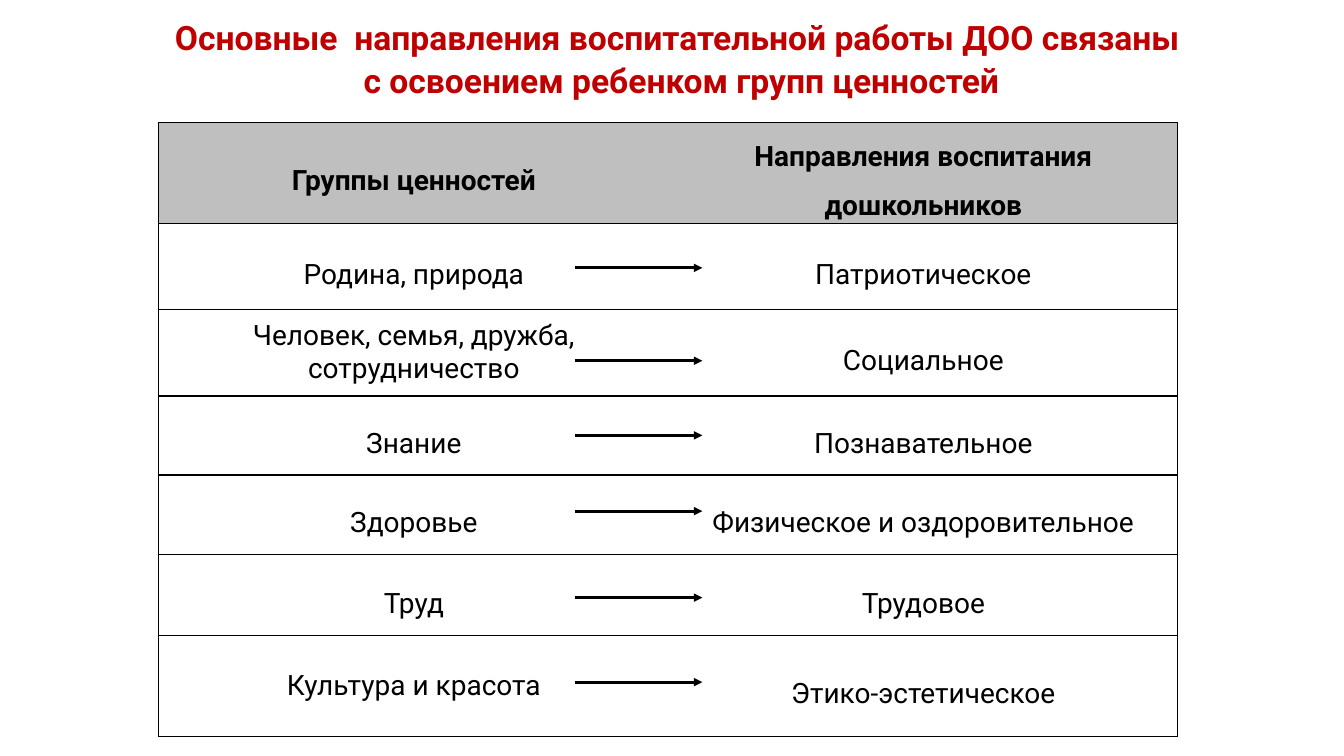
from lxml import etree
from pptx import Presentation
from pptx import util as u
from pptx.dml.color import RGBColor
from pptx.enum import shapes, text
from pptx.oxml.ns import qn

FONT = "Roboto"
BLACK, RED, GREY = "000000", "C00000", "BFBFBF"
TITLE = ["Основные  направления воспитательной работы ДОО связаны ",
         "с освоением ребенком групп ценностей"]
HEADER = ("Группы ценностей", "Направления воспитания дошкольников")
HEADER_H = 2.54
# value group, direction, row height, arrow offset from the row's top (cm)
ROWS = [
    ("Родина, природа", "Патриотическое", 2.17, 1.12),
    ("Человек, семья, дружба, сотрудничество", "Социальное", 2.18, 1.29),
    ("Знание", "Познавательное", 1.99, 0.99),
    ("Здоровье", "Физическое и оздоровительное", 2.01, 0.91),
    ("Труд", "Трудовое", 2.04, 1.08),
    ("Культура и красота", "Этико-эстетическое", 2.54, 1.17),
]
SINGLE_SPACED = {"Человек, семья, дружба, сотрудничество", "Культура и красота"}


def color(hex_string):
    return RGBColor.from_string(hex_string)


def add_run(p, words, size, hex_string, bold):
    p.alignment = text.PP_ALIGN.CENTER
    r = p.add_run()
    r.text = words
    r.font.name, r.font.size, r.font.bold = FONT, u.Pt(size), bold
    r.font.color.rgb = color(hex_string)


def add_title(s, x, y, w, h):
    sp = s.shapes.title
    sp.left, sp.top, sp.width, sp.height = (u.Cm(v) for v in (x, y, w, h))
    tf = sp.text_frame
    tf.word_wrap = True
    tf.auto_size = text.MSO_AUTO_SIZE.NONE
    tf.vertical_anchor = text.MSO_ANCHOR.TOP
    for i, line in enumerate(TITLE):
        p = tf.add_paragraph() if i else tf.paragraphs[0]
        p.line_spacing = 1.07
        p.space_before = u.Pt(0)
        p._p.get_or_add_pPr().set("indent", str(u.Cm(0.64)))
        add_run(p, line, 24, RED, True)


def set_borders(cell, edges):
    """Draw the named edges (L, R, T, B) in black and clear the others."""
    tcPr = cell._tc.get_or_add_tcPr()
    for edge in "LRTB":
        ln = etree.SubElement(tcPr, qn(f"a:ln{edge}"), w=str(u.Pt(1)))
        if edge in edges:
            fill = etree.SubElement(ln, qn("a:solidFill"))
            etree.SubElement(fill, qn("a:srgbClr"), val=BLACK)
        else:
            etree.SubElement(ln, qn("a:noFill"))


def fill_cell(cell, words, edges, is_header):
    set_borders(cell, edges)
    if is_header:
        cell.fill.solid()
        cell.fill.fore_color.rgb = color(GREY)
    else:
        cell.fill.background()
    cell.vertical_anchor = text.MSO_ANCHOR.MIDDLE
    cell.margin_left = cell.margin_right = u.Cm(0.18)
    cell.margin_top = cell.margin_bottom = 0
    p = cell.text_frame.paragraphs[0]
    p.line_spacing = 1.0 if words in SINGLE_SPACED else 1.5
    if is_header:
        p.space_before = p.space_after = u.Pt(12)
    add_run(p, words, 20, BLACK, is_header)


def add_arrow(s, x, y, w):
    cn = s.shapes.add_connector(shapes.MSO_CONNECTOR.STRAIGHT,
                                u.Cm(x), u.Cm(y), u.Cm(x + w), u.Cm(y))
    cn.line.color.rgb = color(BLACK)
    cn.line.width = u.Pt(2)
    etree.SubElement(cn.line._get_or_add_ln(), qn("a:tailEnd"), type="triangle")
    etree.SubElement(cn._element.spPr, qn("a:effectLst"))


def add_values_table(s, x, y, w):
    heights = [HEADER_H] + [row[2] for row in ROWS]
    frame = s.shapes.add_table(len(heights), 2, u.Cm(x), u.Cm(y),
                               u.Cm(w), u.Cm(sum(heights)))
    table = frame.table
    table.first_row = table.horz_banding = False
    left_w = 12.88
    table.columns[0].width = u.Cm(left_w)
    table.columns[1].width = u.Cm(w - left_w)
    for i, words in enumerate([HEADER] + [row[:2] for row in ROWS]):
        table.rows[i].height = u.Cm(heights[i])
        for j, edges in enumerate(("LTB", "RTB")):
            fill_cell(table.cell(i, j), words[j], edges, i == 0)
    top = y + HEADER_H
    for _, _, height, offset in ROWS:
        add_arrow(s, x + 10.49, top + offset, 3.22)
        top += height


def main():
    prs = Presentation()
    prs.slide_width, prs.slide_height = u.Cm(33.87), u.Cm(19.05)
    s = prs.slides.add_slide(prs.slide_layouts[5])
    add_title(s, 0.79, 0.23, 32.13, 2.36)
    add_values_table(s, 3.99, 3.09, 25.68)
    prs.save("out.pptx")


if __name__ == "__main__":
    main()
